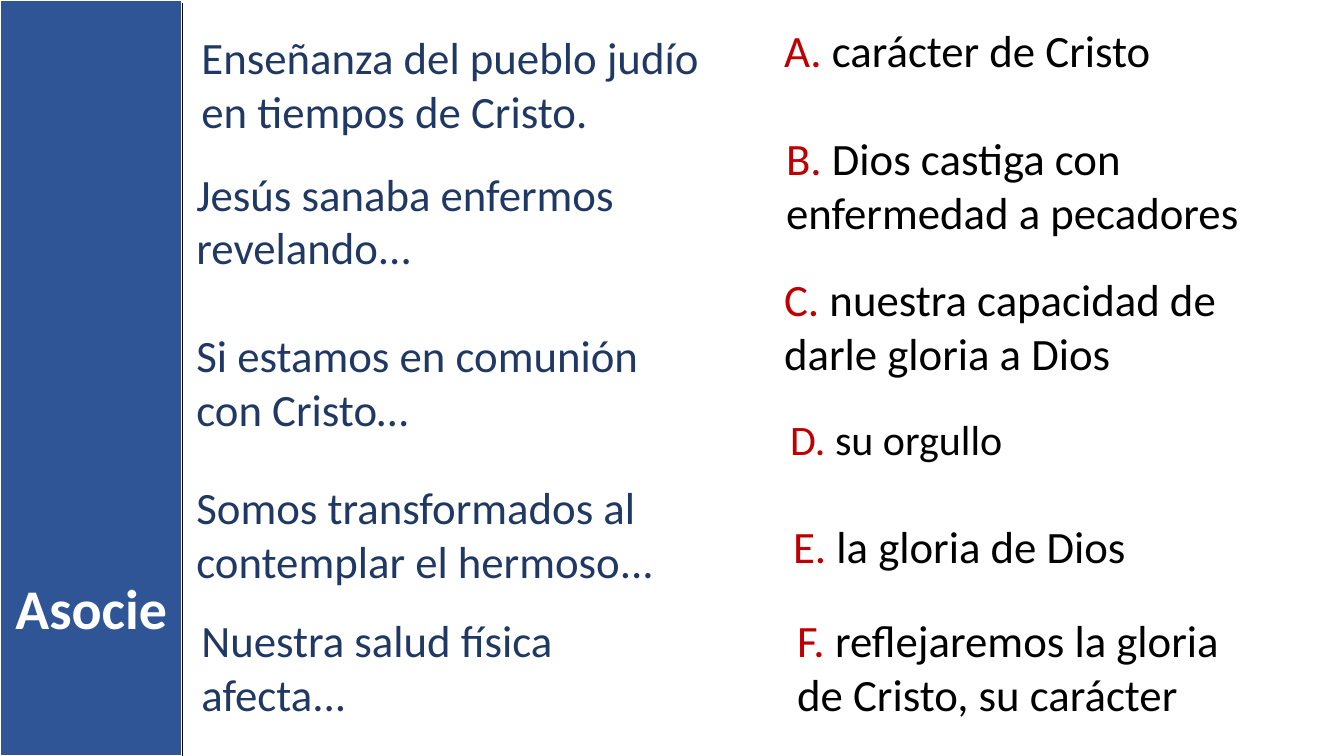
"""Build a matching exercise slide with statements, lettered answers and a title bar."""
import pptx
import pptx.dml.color
import pptx.enum.shapes
import pptx.enum.text
import pptx.oxml.ns
import pptx.util
from lxml import etree

Pt = pptx.util.Pt
WIDTH, HEIGHT = 960, 540
BAR_WIDTH = 130.3
NAVY, RED, BLACK, WHITE, BLUE = "203864", "C00000", "000000", "FFFFFF", "2F5597"
TITLE = "Asocie"

STATEMENTS = [
    ("Enseñanza del pueblo judío en tiempos de Cristo.", 136.8, 18, 388),
    ("Jesús sanaba enfermos revelando...", 133.2, 115.2, 371.5),
    ("Si estamos en comunión con Cristo…", 133.2, 230.4, 367.2),
    ("Somos transformados al contemplar el hermoso...", 133.2, 339.1, 355.7),
    ("Nuestra salud física afecta...", 136.8, 434.2, 371.5),
]
ANSWERS = [
    ("carácter de Cristo", 553, 13, 360, 46, 32),
    ("Dios castiga con enfermedad a pecadores", 554.4, 90, 386.6, 85, 32),
    ("nuestra capacidad de darle gloria a Dios", 553, 190.8, 340.6, 85, 32),
    ("su orgullo", 557.3, 291.6, 342, 44, 30),
    ("la gloria de Dios", 559.4, 367.2, 353.5, 46, 32),
    ("reflejaremos la gloria de Cristo, su carácter", 562.3, 434.2, 332.6, 85, 32),
]


def color(value):
    return pptx.dml.color.RGBColor.from_string(value)


def apply(target, formats):
    for name, value in formats.items():
        setattr(target, name, value)


def write(box, pieces, size, **extra):
    apply(box.text_frame, {
        "word_wrap": True,
        "auto_size": pptx.enum.text.MSO_AUTO_SIZE.SHAPE_TO_FIT_TEXT,
        "vertical_anchor": pptx.enum.text.MSO_ANCHOR.TOP,
    })
    para = box.text_frame.paragraphs[0]
    for text, shade in pieces:
        span = para.add_run()
        span.text = text
        apply(span.font, {"name": "Calibri", "size": Pt(size), **extra})
        span.font.color.rgb = color(shade)
    return para


def add_text(page, left, top, width, height, pieces, size):
    box = page.shapes.add_textbox(Pt(left), Pt(top), Pt(width), Pt(height))
    write(box, pieces, size)


def add_bar(page):
    bar = page.shapes.add_shape(
        pptx.enum.shapes.MSO_SHAPE.RECTANGLE, 0, 0, Pt(BAR_WIDTH), Pt(HEIGHT))
    bar.shadow.inherit = False
    bar.fill.solid()
    bar.fill.fore_color.rgb = color(BLUE)
    bar.line.color.rgb = color(WHITE)
    bar.line.width = Pt(1.5)

    title = page.shapes.title
    apply(title, {"left": Pt(0), "top": Pt(406), "width": Pt(BAR_WIDTH), "height": Pt(55.4)})
    para = write(title, [(TITLE, WHITE)], 40, bold=True)
    para.alignment = pptx.enum.text.PP_ALIGN.CENTER
    bar.element.addnext(title.element)

    edge = page.shapes.add_connector(
        pptx.enum.shapes.MSO_CONNECTOR.STRAIGHT,
        Pt(BAR_WIDTH), Pt(2), Pt(BAR_WIDTH), Pt(HEIGHT))
    edge.line.color.rgb = color(BLACK)
    edge.line.width = Pt(1)
    etree.SubElement(edge.element.spPr, pptx.oxml.ns.qn("a:effectLst"))


def main():
    deck = pptx.Presentation()
    apply(deck, {"slide_width": Pt(WIDTH), "slide_height": Pt(HEIGHT)})
    page = deck.slides.add_slide(deck.slide_layouts[5])
    add_bar(page)
    for text, left, top, width in STATEMENTS:
        add_text(page, left, top, width, 85, [(text, NAVY)], 32)
    for letter, (text, left, top, width, height, size) in zip("ABCDEF", ANSWERS):
        pieces = [(f"{letter}. ", RED), (text, BLACK)]
        add_text(page, left, top, width, height, pieces, size)
    deck.save("out.pptx")


if __name__ == "__main__":
    main()
